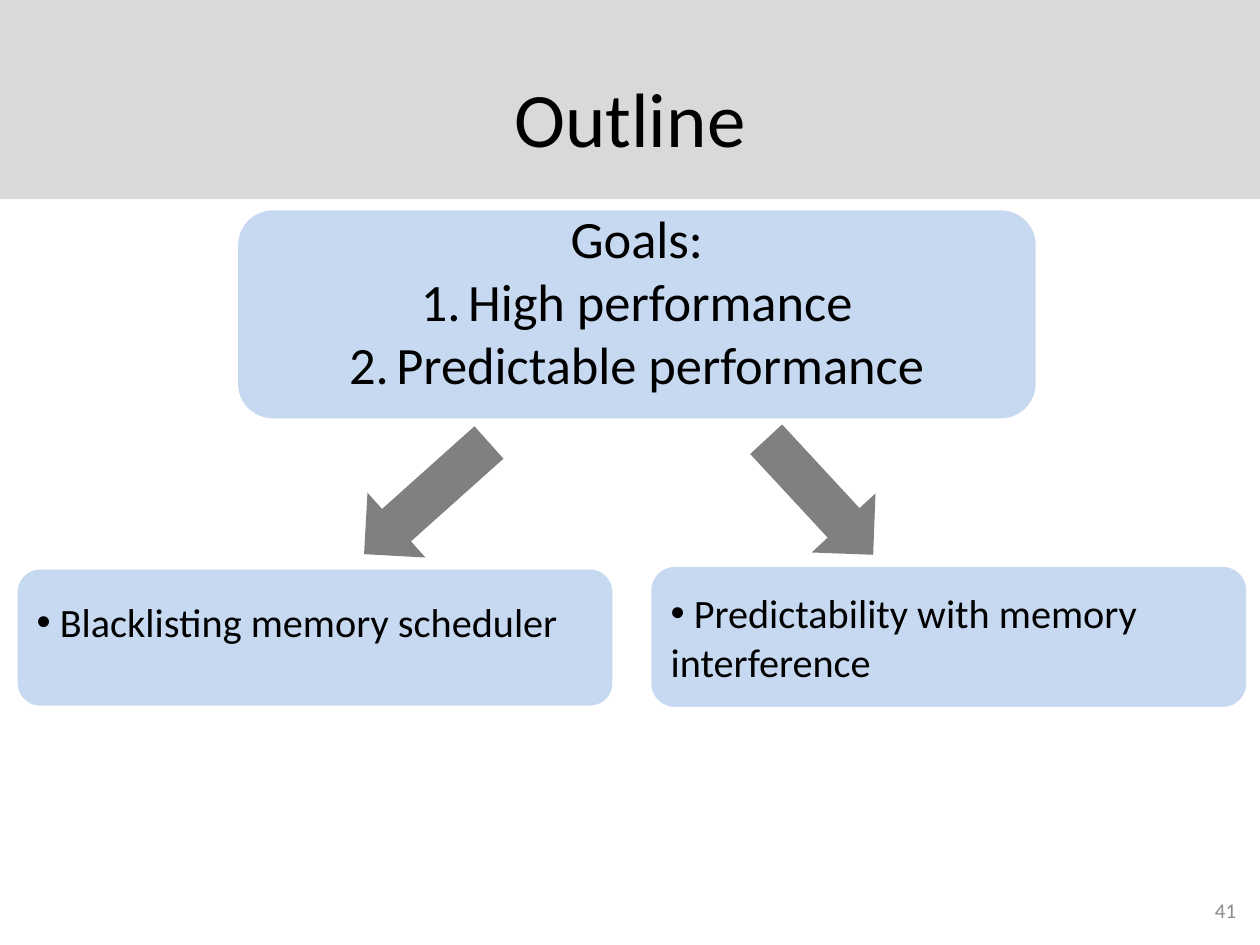
from lxml.etree import SubElement
from pptx import Presentation
from pptx.dml.color import RGBColor
from pptx.enum.shapes import MSO_SHAPE as Shape
from pptx.enum.text import MSO_ANCHOR as Anchor, PP_ALIGN as Align
from pptx.oxml.ns import qn
from pptx.util import Inches, Pt

BLACK = RGBColor(0x00, 0x00, 0x00)
BAND_GREY = RGBColor(0xD9, 0xD9, 0xD9)
ARROW_GREY = RGBColor(0x80, 0x80, 0x80)
NUMBER_GREY = RGBColor(0x8C, 0x8C, 0x8C)
PALE_BLUE = RGBColor(0xC6, 0xD9, 0xF1)

deck = Presentation()
deck.slide_width, deck.slide_height = Inches(10), Inches(7.5)
slide = deck.slides.add_slide(deck.slide_layouts[6])
shapes = slide.shapes

# Grid of 100 columns by 75 rows
COL = deck.slide_width / 100
ROW = deck.slide_height / 75


def add_block(kind, left, top, width, height, fill=None):
    """Add a borderless shape, or a text box if kind is None, in grid units."""
    box = [round(n) for n in (left * COL, top * ROW, width * COL, height * ROW)]
    if kind is None:
        return shapes.add_textbox(*box)
    block = shapes.add_shape(kind, *box)
    block.shadow.inherit = False
    block.fill.solid()
    block.fill.fore_color.rgb = fill
    block.line.fill.background()
    return block


def write(block, *lines, size, color=BLACK, align=Align.LEFT, bullet=None,
          numbered_from=None, top=0.5, bottom=0.5):
    """Fill a block with lines; those from index numbered_from on are numbered."""
    frame = block.text_frame
    frame.word_wrap = True
    frame.vertical_anchor = Anchor.MIDDLE
    frame.margin_top, frame.margin_bottom = round(top * ROW), round(bottom * ROW)
    for index, line in enumerate(lines):
        paragraph = frame.paragraphs[0] if index == 0 else frame.add_paragraph()
        paragraph.alignment = align
        props = paragraph._p.get_or_add_pPr()
        if bullet:
            SubElement(props, qn("a:buFont"), typeface="Arial")
            SubElement(props, qn("a:buChar"), char=bullet)
        elif numbered_from is not None and index >= numbered_from:
            indent = round(3.75 * COL)
            props.set("marL", str(indent))
            props.set("indent", str(-indent))
            SubElement(props, qn("a:buFont"), typeface="+mj-lt")
            SubElement(props, qn("a:buAutoNum"), type="arabicPeriod")
        run = paragraph.add_run()
        run.text = line
        run.font.name = "Calibri"
        run.font.size = Pt(size)
        run.font.color.rgb = color


add_block(Shape.RECTANGLE, 0, 0, 100, 15.8, BAND_GREY)
write(add_block(None, 5, 3, 90, 12.5), "Outline", size=44, align=Align.CENTER)
write(add_block(None, 75.8, 70.2, 23.3, 4), "41", size=12, color=NUMBER_GREY,
      align=Align.RIGHT)

for left, top, width, angle in ((58.8, 36, 12.5, 47.2), (27.2, 36.1, 13.3, 138.2)):
    add_block(Shape.RIGHT_ARROW, left, top, width, 6.9, ARROW_GREY).rotation = angle

scheduler = add_block(Shape.ROUNDED_RECTANGLE, 1.4, 45.2, 47.2, 10.8, PALE_BLUE)
write(scheduler, " Blacklisting memory scheduler", size=23, bullet="•", bottom=3)

predictability = add_block(Shape.ROUNDED_RECTANGLE, 51.7, 45, 47.2, 11.1, PALE_BLUE)
write(predictability, " Predictability with memory interference", size=23, bullet="•")

goals = add_block(Shape.ROUNDED_RECTANGLE, 18.9, 16.7, 63.3, 16.5, PALE_BLUE)
write(goals, "Goals:", "High performance", "Predictable performance", size=30,
      align=Align.CENTER, numbered_from=1, top=0, bottom=2.2)

deck.save("out.pptx")
